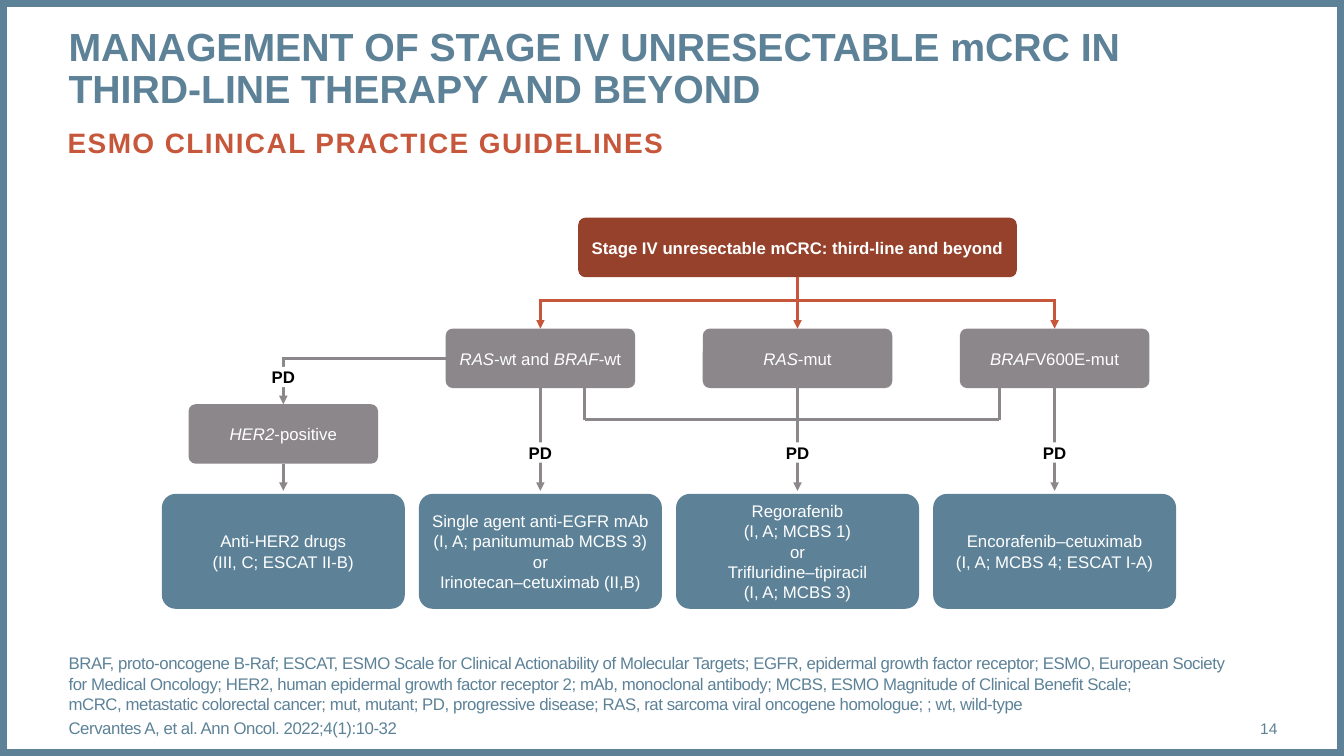
"""Build the third-line mCRC treatment algorithm slide."""
import copy
from dataclasses import dataclass

import lxml.etree
import pptx
import pptx.dml.color
import pptx.enum.shapes
import pptx.enum.text
import pptx.oxml.ns
import pptx.util

Inches = pptx.util.Inches
Pt = pptx.util.Pt
qn = pptx.oxml.ns.qn
Align = pptx.enum.text.PP_ALIGN
Anchor = pptx.enum.text.MSO_ANCHOR
Preset = pptx.enum.shapes.MSO_SHAPE
TOP, LEFT, BOTTOM = 0, 1, 2


@dataclass(frozen=True)
class Theme:
    """Colours, font and type sizes of the slide."""
    blue: str = "5D8298"
    orange: str = "C6573B"
    rust: str = "95412B"
    grey: str = "8B878B"
    white: str = "FFFFFF"
    black: str = "000000"
    font: str = "Arial"
    title: int = 28
    subtitle: int = 20
    text: int = 12
    number: int = 11
    rule: int = 2
    frame: int = 10


class SlideBuilder:
    """Draw themed elements on one slide."""

    def __init__(self, slide, theme):
        """Keep the slide and its theme."""
        self.slide = slide
        self.theme = theme

    def colour(self, value):
        """Turn a hex value into a colour."""
        return pptx.dml.color.RGBColor.from_string(value)

    def set_text(self, shape, texts, size, colour, bold=False, spacing=0,
                 insets=(0, 0), anchor=Anchor.TOP, wrap=True, **paragraph):
        """Fill a shape with paragraphs; asterisks enclose italics."""
        frame = shape.text_frame
        across, down = (Inches(inset) for inset in insets)
        layout = {"margin_left": across, "margin_right": across,
                  "margin_top": down, "margin_bottom": down,
                  "auto_size": pptx.enum.text.MSO_AUTO_SIZE.NONE,
                  "vertical_anchor": anchor, "word_wrap": wrap}
        for name, value in layout.items():
            setattr(frame, name, value)
        for index, text in enumerate(texts):
            para = frame.add_paragraph() if index else frame.paragraphs[0]
            for name, value in paragraph.items():
                setattr(para, name, value)
            for part, words in enumerate(text.split("*")):
                for row, line in enumerate(words.split("\n")):
                    if row:
                        para.add_line_break()
                        line_break = para._p[-1]
                    span = para.add_run()
                    span.text = line
                    style = {"name": self.theme.font, "size": Pt(size),
                             "bold": bold, "italic": part % 2 == 1}
                    for name, value in style.items():
                        setattr(span.font, name, value)
                    span.font.color.rgb = self.colour(colour)
                    properties = span._r.get_or_add_rPr()
                    if spacing:
                        properties.set("spc", str(spacing))
                    if row:
                        line_break.append(copy.deepcopy(properties))

    def placeholder(self, index, area, texts, size, colour, **style):
        """Move and fill a template placeholder."""
        holder = self.slide.placeholders[index]
        for name, value in zip(("left", "top", "width", "height"), area):
            setattr(holder, name, Inches(value))
        self.set_text(holder, texts, size, colour, alignment=Align.LEFT, **style)

    def textbox(self, area, text, size, colour, **style):
        """Add a free text box."""
        box = self.slide.shapes.add_textbox(*map(Inches, area))
        self.set_text(box, [text], size, colour, **style)

    def shape(self, preset, area, fill=None):
        """Add a preset shape without an outline or shadow."""
        shape = self.slide.shapes.add_shape(preset, *map(Inches, area))
        shape.shadow.inherit = False
        shape.line.fill.background()
        if fill:
            shape.fill.solid()
            shape.fill.fore_color.rgb = self.colour(fill)
        else:
            shape.fill.background()
        return shape

    def frame(self, width, height):
        """Outline the whole slide."""
        border = self.shape(Preset.RECTANGLE, (0, 0, width, height))
        border.line.color.rgb = self.colour(self.theme.blue)
        border.line.width = Pt(self.theme.frame)

    def box(self, centre, top, width, height, text, fill, bold=False):
        """Add a rounded box centred on a column."""
        box = self.shape(Preset.ROUNDED_RECTANGLE, (centre - width / 2, top, width, height), fill)
        box.adjustments[0] = 0.12
        self.set_text(box, [text], self.theme.text, self.theme.white, bold=bold,
                      insets=(0, 0.05), anchor=Anchor.MIDDLE, alignment=Align.CENTER)
        return box

    def label(self, centre, top):
        """Mark an arrow with progressive disease."""
        width, height = 0.39, 0.2
        tag = self.shape(Preset.RECTANGLE, (centre - width / 2, top, width, height), self.theme.white)
        self.set_text(tag, ["PD"], self.theme.text, self.theme.black, bold=True,
                      insets=(0.08, 0), wrap=False, alignment=Align.CENTER)

    def line(self, start, end, colour, arrow=False, source=None, target=None):
        """Add a line, optionally joined to (shape, side) pairs."""
        line = self.slide.shapes.add_connector(
            pptx.enum.shapes.MSO_CONNECTOR.STRAIGHT, *map(Inches, start + end))
        line.line.color.rgb = self.colour(colour)
        line.line.width = Pt(self.theme.rule)
        properties = line._element.spPr
        if arrow:
            lxml.etree.SubElement(properties.find(qn("a:ln")), qn("a:tailEnd"), type="triangle")
        lxml.etree.SubElement(properties, qn("a:effectLst"))
        if source:
            line.begin_connect(*source)
        if target:
            line.end_connect(*target)


def main():
    """Compose and save the slide."""
    theme = Theme()
    deck = pptx.Presentation()
    width, height = 13.33, 7.5
    deck.slide_width, deck.slide_height = Inches(width), Inches(height)
    page = deck.slides.add_slide(deck.slide_layouts[4])
    for index in (2, 4):
        unused = page.placeholders[index]._element
        unused.getparent().remove(unused)
    builder = SlideBuilder(page, theme)

    builder.frame(width, height)
    builder.placeholder(0, (0.68, 0.27, 11.99, 0.88), [
        "MANAGEMENT OF STAGE IV UNRESECTABLE mCRC IN \nTHIRD-LINE THERAPY AND BEYOND",
    ], theme.title, theme.blue, bold=True, line_spacing=Pt(30))
    builder.placeholder(1, (0.67, 1.24, 12, 0.77), ["ESMO CLINICAL PRACTICE GUIDELINES"],
                        theme.subtitle, theme.orange, bold=True, spacing=100, space_before=Pt(12))
    builder.placeholder(3, (0.68, 6.7, 11.66, 0.4), [
        "BRAF, proto-oncogene B-Raf; ESCAT, ESMO Scale for Clinical Actionability of Molecular Targets; "
        "EGFR, epidermal growth factor receptor; ESMO, European Society for Medical Oncology; "
        "HER2, human epidermal growth factor receptor 2; mAb, monoclonal antibody; "
        "MCBS, ESMO Magnitude of Clinical Benefit Scale; \n"
        "mCRC, metastatic colorectal cancer; mut, mutant; PD, progressive disease; "
        "RAS, rat sarcoma viral oncogene homologue; ; wt, wild-type",
        "Cervantes A, et al. Ann Oncol. 2022;4(1):10-32",
    ], theme.text, theme.blue, spacing=-30, anchor=Anchor.MIDDLE, space_before=Pt(3))
    builder.textbox((11.81, 7.03, 0.86, 0.4), "14", theme.number, theme.blue,
                    anchor=Anchor.MIDDLE, alignment=Align.RIGHT)

    columns = [2.81 + 2.55 * index for index in range(4)]
    her2_x, wild_x, ras_x, braf_x = columns
    group_top, group_width, group_height = 3.26, 1.88, 0.59
    group_bottom, group_middle = group_top + group_height, group_top + group_height / 2
    her2_top, drug_top, arrow_end = 4.01, 4.9, 4.87
    fork_y, bracket_y, overlap = 2.98, 4.16, 0.01

    root = builder.box(ras_x, 2.16, 4.35, group_height,
                       "Stage IV unresectable mCRC: third-line and beyond", theme.rust, bold=True)
    groups = [builder.box(x, top, group_width, group_height, text, theme.grey)
              for x, top, text in zip(columns, (her2_top,) + (group_top,) * 3, (
                  "*HER2*-positive", "*RAS*-wt and *BRAF*-wt", "*RAS*-mut", "*BRAF*V600E-mut"))]
    drugs = ("Anti-HER2 drugs\n(III, C; ESCAT II-B)",
             "Single agent anti-EGFR mAb\n(I, A; panitumumab MCBS 3)\nor\nIrinotecan–cetuximab (II,B)",
             "Regorafenib\n(I, A; MCBS 1)\nor\nTrifluridine–tipiracil\n(I, A; MCBS 3)",
             "Encorafenib–cetuximab\n(I, A; MCBS 4; ESCAT I-A)")
    for x, group, text in zip(columns, groups, drugs):
        builder.box(x, drug_top, 2.41, 1.14, text, theme.blue)
        builder.line((x, group_bottom), (x, arrow_end), theme.grey, True, source=(group, BOTTOM))

    her2, wild, ras, braf = groups
    builder.line((wild_x, fork_y), (braf_x, fork_y), theme.orange)
    for x, group in ((wild_x, wild), (braf_x, braf)):
        builder.line((x, fork_y - overlap), (x, group_top), theme.orange, True, target=(group, TOP))
    builder.line((ras_x, 2.75), (ras_x, group_top), theme.orange, True,
                 source=(root, BOTTOM), target=(ras, TOP))

    bracket = (5.8, 9.91)
    builder.line((bracket[0], bracket_y), (bracket[1], bracket_y), theme.grey)
    for x in bracket:
        builder.line((x, group_bottom), (x, bracket_y + overlap), theme.grey)

    builder.line((wild_x, group_middle), (her2_x, group_middle), theme.grey, source=(wild, LEFT))
    builder.line((her2_x, group_middle - overlap), (her2_x, her2_top), theme.grey, True,
                 target=(her2, TOP))
    for x, top in zip(columns, (3.64, 4.39, 4.39, 4.39)):
        builder.label(x, top)

    deck.save("out.pptx")


if __name__ == "__main__":
    main()
